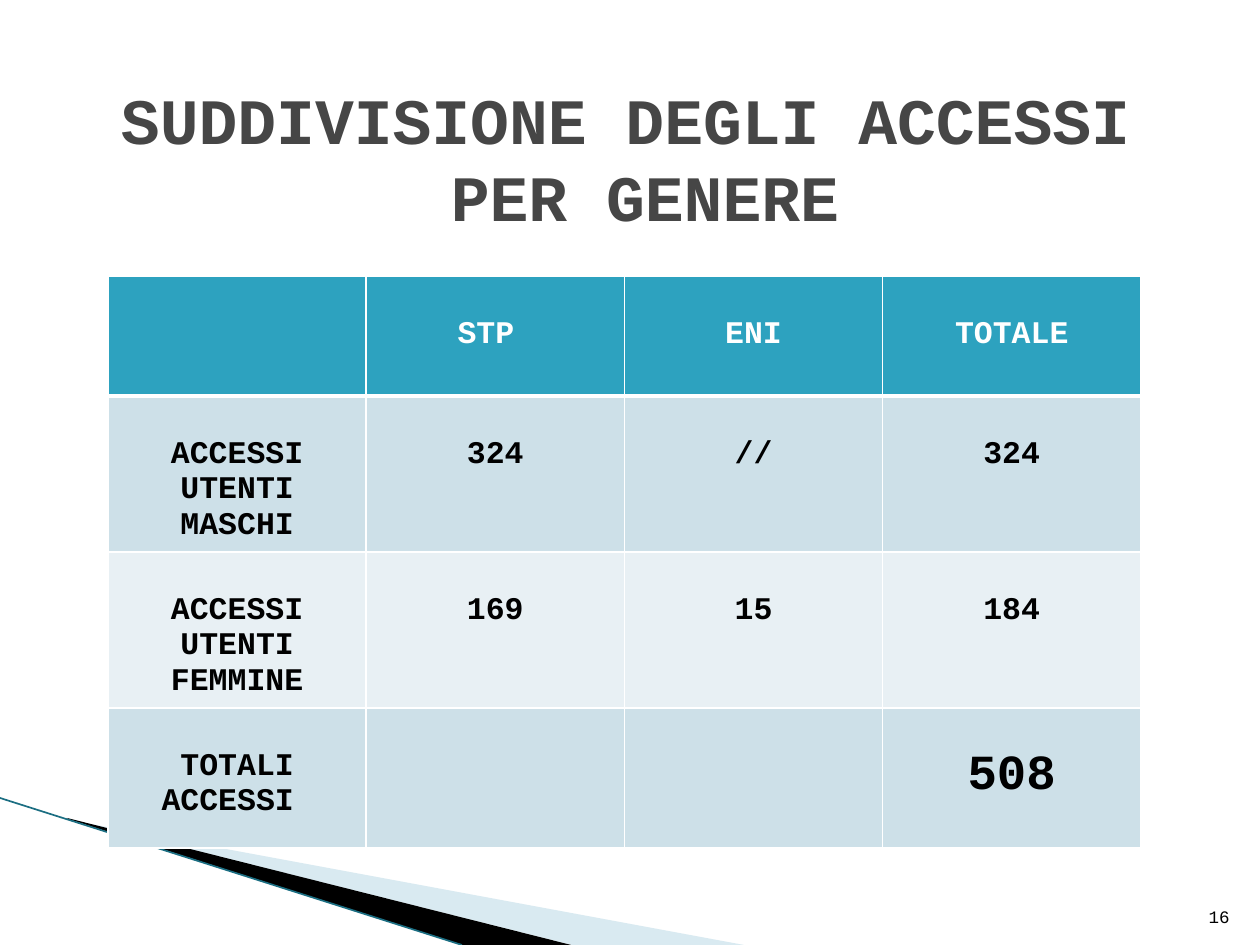
from lxml import etree
from pptx import Presentation
from pptx import util as u
from pptx.dml.color import RGBColor
from pptx.enum import shapes, text
from pptx.oxml import ns

EMU_PER_PX = 914400 / 126
FONT = "Courier New"
COLORS = {
    "title": "464646", "ink": "000000", "white": "FFFFFF",
    "header": "2DA2BF", "band": "CDE0E8", "alternate": "E8F0F4",
    "wedge": "A0CBDC", "edge": "1B6E82",
}
ROWS = [
    ["", "STP ", "ENI", "TOTALE"],
    ["ACCESSI UTENTI MASCHI", "324", "//", "324"],
    ["ACCESSI UTENTI FEMMINE", "169", "15", "184"],
    ["TOTALI ACCESSI ", "", "", "508"],
]
TABLE_WIDTH = 1033
ROW_HEIGHTS = [120, 156, 156, 140]
ROW_FILLS = ["header", "band", "alternate", "band"]


def px(length):
    return u.Emu(round(length * EMU_PER_PX))


def color(name):
    return RGBColor.from_string(COLORS[name])


def format_text(frame, size, ink, bold, align):
    for paragraph in frame.paragraphs:
        paragraph.alignment = align
        for run in paragraph.runs:
            run.font.name = FONT
            run.font.size = u.Pt(size)
            run.font.bold = bold
            run.font.color.rgb = color(ink)


def place(shape, left, top, width, height):
    shape.left, shape.top = px(left), px(top)
    shape.width, shape.height = px(width), px(height)


def add_wedge(slide, points, frame, fill, opacity=100):
    builder = slide.shapes.build_freeform(*points[0], scale=EMU_PER_PX)
    builder.add_line_segments(points[1:], close=True)
    wedge = builder.convert_to_shape()
    place(wedge, *frame)
    left, top, width, height = frame
    outline = wedge._element.spPr.find(".//" + ns.qn("a:path"))
    outline.set("w", str(width))
    outline.set("h", str(height))
    for vertex, (x, y) in zip(outline.iter(ns.qn("a:pt")), points):
        vertex.set("x", str(x - left))
        vertex.set("y", str(y - top))
    wedge.shadow.inherit = False
    wedge.fill.solid()
    wedge.fill.fore_color.rgb = color(fill)
    if opacity < 100:
        tint = wedge._element.spPr.find(".//" + ns.qn("a:srgbClr"))
        etree.SubElement(tint, ns.qn("a:alpha"), val=str(opacity * 1000))
    wedge.line.fill.background()


def add_edge(slide, start, end):
    edge = slide.shapes.add_connector(
        shapes.MSO_CONNECTOR.STRAIGHT, *map(px, start + end))
    edge.line.color.rgb = color("edge")
    edge.line.width = u.Pt(0.95)
    etree.SubElement(edge._element.spPr, ns.qn("a:effectLst"))


def set_borders(cell, bottom_width):
    properties = cell._tc.get_or_add_tcPr()
    widths = {"lnL": 1, "lnR": 1, "lnT": 1, "lnB": bottom_width}
    for position, (side, width) in enumerate(widths.items()):
        border = etree.Element(ns.qn(f"a:{side}"), w=str(u.Pt(width)))
        fill = etree.SubElement(border, ns.qn("a:solidFill"))
        etree.SubElement(fill, ns.qn("a:srgbClr"), val=COLORS["white"])
        properties.insert(position, border)


def add_access_table(slide):
    accesses = slide.shapes.add_table(
        len(ROWS), len(ROWS[0]), px(108), px(276),
        px(TABLE_WIDTH), px(sum(ROW_HEIGHTS))).table
    for column in accesses.columns:
        column.width = px(TABLE_WIDTH / len(ROWS[0]))
    for index, values in enumerate(ROWS):
        accesses.rows[index].height = px(ROW_HEIGHTS[index])
        for column, value in enumerate(values):
            cell = accesses.cell(index, column)
            cell.text_frame.text = value
            cell.margin_top = px(41)
            cell.margin_bottom = px(6)
            cell.fill.solid()
            cell.fill.fore_color.rgb = color(ROW_FILLS[index])
            set_borders(cell, 3 if index == 0 else 1)
            format_text(cell.text_frame, 28 if value == "508" else 18,
                        "white" if index == 0 else "ink", True,
                        text.PP_ALIGN.CENTER)


def add_title(slide):
    title = slide.shapes.title
    place(title, 78, 78, 1134, 158)
    title.text_frame.text = "SUDDIVISIONE DEGLI ACCESSI \vPER GENERE"
    title.text_frame.vertical_anchor = text.MSO_ANCHOR.MIDDLE
    format_text(title.text_frame, 37, "title", True, text.PP_ALIGN.CENTER)


def add_page_number(slide):
    number = slide.shapes.add_textbox(px(1192), px(883), px(50), px(50))
    frame = number.text_frame
    frame.text = "16"
    frame.word_wrap = True
    frame.vertical_anchor = text.MSO_ANCHOR.BOTTOM
    format_text(frame, 10, "ink", False, text.PP_ALIGN.RIGHT)


def main():
    deck = Presentation()
    deck.slide_width, deck.slide_height = px(1260), px(945)
    slide = deck.slides.add_slide(deck.slide_layouts[5])
    add_wedge(slide, [(69, 820), (744, 945), (572, 945), (69, 819)],
              (98, 689, 524, 199), "wedge", 40)
    add_wedge(slide, [(67, 818), (571, 945), (462, 945), (68, 819)],
              (-8, 798, 524, 116), "ink")
    add_edge(slide, (0, 798), (462, 945))
    add_access_table(slide)
    add_title(slide)
    add_page_number(slide)
    deck.save("out.pptx")


if __name__ == "__main__":
    main()
